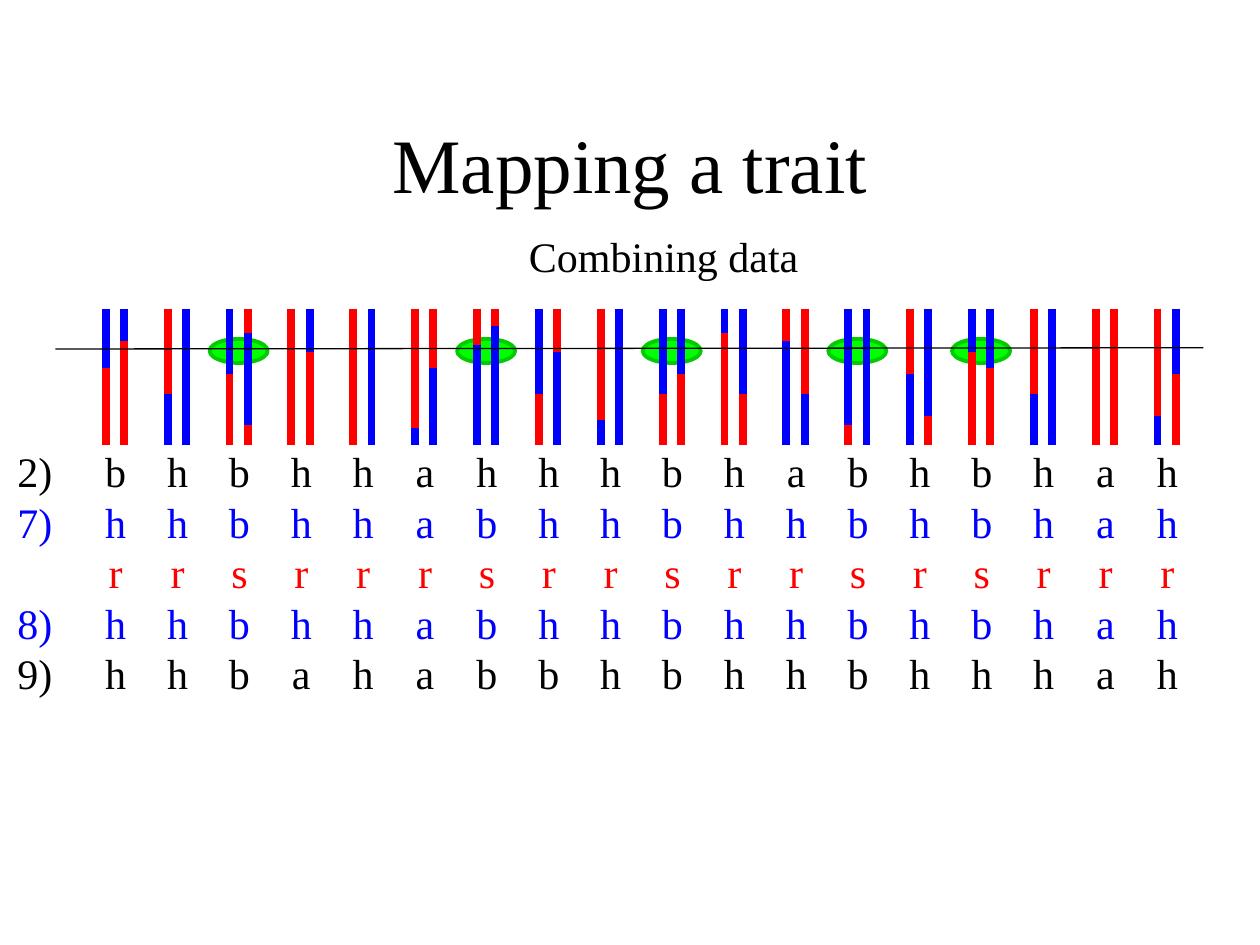
import pptx
import pptx.dml.color
import pptx.enum.shapes
import pptx.enum.text
import pptx.util
from lxml import etree
from pptx.oxml.ns import qn
from typing import NamedTuple, Optional, Tuple

Inches = pptx.util.Inches
Pt = pptx.util.Pt

BLACK, BLUE, RED = "000000", "0000FF", "FF0000"
FONT_NAME = "Times New Roman"
TOP, BOTTOM = 2.45, 3.53
FIRST_X, COLUMN_STEP, STRAND_GAP = 0.84, 0.491, 0.145
FIRST_TAB = 0.78
FULL = (TOP, BOTTOM)
Span = Optional[Tuple[float, float]]


class Individual(NamedTuple):
    """Red part of the left strand and blue part of the right strand."""
    red: Span
    blue: Span
    resistant: bool = True


class ScoreRow(NamedTuple):
    number: Optional[int]
    scores: str
    color: str


INDIVIDUALS = [
    Individual((2.92, BOTTOM), (TOP, 2.71)),
    Individual((TOP, 3.13), FULL),
    Individual((2.97, BOTTOM), (2.64, 3.37), False),
    Individual(FULL, (TOP, 2.79)),
    Individual(FULL, FULL),
    Individual((TOP, 3.4), (2.92, BOTTOM)),
    Individual((TOP, 2.74), (2.59, BOTTOM), False),
    Individual((3.13, BOTTOM), (2.79, BOTTOM)),
    Individual((TOP, 3.33), FULL),
    Individual((3.13, BOTTOM), (TOP, 2.97), False),
    Individual((2.64, BOTTOM), (TOP, 3.13)),
    Individual((TOP, 2.71), (3.13, BOTTOM)),
    Individual((3.37, BOTTOM), FULL, False),
    Individual((TOP, 2.97), (TOP, 3.3)),
    Individual((2.79, BOTTOM), (TOP, 2.92), False),
    Individual((TOP, 3.13), FULL),
    Individual(FULL, None),
    Individual((TOP, 3.3), (TOP, 2.97)),
]

SCORE_ROWS = [
    ScoreRow(2, "bhbhhahhhbhabhbhah", BLACK),
    ScoreRow(7, "hhbhhabhhbhhbhbhah", BLUE),
    ScoreRow(None, "rrsrrrsrrsrrsrsrrr", RED),
    ScoreRow(8, "hhbhhabhhbhhbhbhah", BLUE),
    ScoreRow(9, "hhbahabbhbhhbhhhah", BLACK),
]


def rgb(color: str) -> pptx.dml.color.RGBColor:
    return pptx.dml.color.RGBColor.from_string(color)


def format_run(run, size: float, color: str) -> None:
    for name, value in {"name": FONT_NAME, "size": Pt(size)}.items():
        setattr(run.font, name, value)
    run.font.color.rgb = rgb(color)


def add_line(slide, start: Tuple[float, float], end: Tuple[float, float],
             color: str, width: float) -> None:
    line = slide.shapes.add_connector(
        pptx.enum.shapes.MSO_CONNECTOR.STRAIGHT,
        *(Inches(value) for value in start + end))
    line.line.color.rgb = rgb(color)
    line.line.width = Pt(width)
    etree.SubElement(line._element.spPr, qn("a:effectLst"))


def add_marker(group, center_x: float) -> None:
    marker = group.shapes.add_shape(
        pptx.enum.shapes.MSO_SHAPE.OVAL,
        Inches(center_x - 0.23), Inches(2.69), Inches(0.46), Inches(0.19))
    marker.shadow.inherit = False
    marker.fill.solid()
    marker.fill.fore_color.rgb = rgb("00FF00")
    marker.line.color.rgb = rgb("00CC00")
    marker.line.width = Pt(2.25)


def add_strand(slide, x: float, base: str, overlay: str, span: Span) -> None:
    add_line(slide, (x, TOP), (x, BOTTOM), base, 4.5)
    if span:
        add_line(slide, (x, span[0]), (x, span[1]), overlay, 4.5)


def write_score_row(paragraph, row: ScoreRow) -> None:
    paragraph.line_spacing = Pt(28.8)
    properties = paragraph._p.get_or_add_pPr()
    if row.number is not None:
        properties.set("marL", str(Inches(0.5)))
        properties.set("indent", str(-Inches(0.5)))
        etree.SubElement(properties, qn("a:buFontTx"))
        etree.SubElement(properties, qn("a:buAutoNum"),
                         type="arabicParenR", startAt=str(row.number))
    tabs = etree.SubElement(properties, qn("a:tabLst"))
    for column in range(len(row.scores)):
        position = Inches(FIRST_TAB + column * COLUMN_STEP)
        etree.SubElement(tabs, qn("a:tab"), pos=str(position), algn="ctr")
    run = paragraph.add_run()
    run.text = "\t" + "\t".join(row.scores)
    format_run(run, 24, row.color)


def main() -> None:
    presentation = pptx.Presentation()
    presentation.slide_width, presentation.slide_height = Inches(10), Inches(7.5)
    slide = presentation.slides.add_slide(presentation.slide_layouts[5])

    # Title
    title = slide.shapes.title
    title.left, title.top = Inches(0.75), Inches(0.67)
    title.width, title.height = Inches(8.5), Inches(1.25)
    title.text_frame.vertical_anchor = pptx.enum.text.MSO_ANCHOR.MIDDLE
    paragraph = title.text_frame.paragraphs[0]
    paragraph.alignment = pptx.enum.text.PP_ALIGN.CENTER
    run = paragraph.add_run()
    run.text = "Mapping a trait"
    format_run(run, 44, BLACK)

    # Green markers behind the susceptible individuals
    markers = slide.shapes.add_group_shape()
    for column, individual in enumerate(INDIVIDUALS):
        if not individual.resistant:
            add_marker(markers, FIRST_X + column * COLUMN_STEP + STRAND_GAP / 2)

    # Chromosome pairs
    for column, individual in enumerate(INDIVIDUALS):
        x = FIRST_X + column * COLUMN_STEP
        add_strand(slide, x, BLUE, RED, individual.red)
        add_strand(slide, x + STRAND_GAP, RED, BLUE, individual.blue)

    # Subtitle
    subtitle = slide.shapes.add_textbox(
        Inches(4.1), Inches(1.78), Inches(2.36), Inches(0.5))
    subtitle.text_frame.word_wrap = False
    run = subtitle.text_frame.paragraphs[0].add_run()
    run.text = "Combining data"
    format_run(run, 24, BLACK)

    # Marker scores, aligned under the chromosome pairs
    scores = slide.shapes.add_textbox(
        Inches(0.04), Inches(3.49), Inches(9.83), Inches(2.52))
    frame = scores.text_frame
    frame.word_wrap = True
    for index, row in enumerate(SCORE_ROWS):
        write_score_row(
            frame.add_paragraph() if index else frame.paragraphs[0], row)

    # Locus line across all pairs
    add_line(slide, (0.44, 2.77), (9.55, 2.76), BLACK, 0.75)

    presentation.save("out.pptx")


if __name__ == "__main__":
    main()
